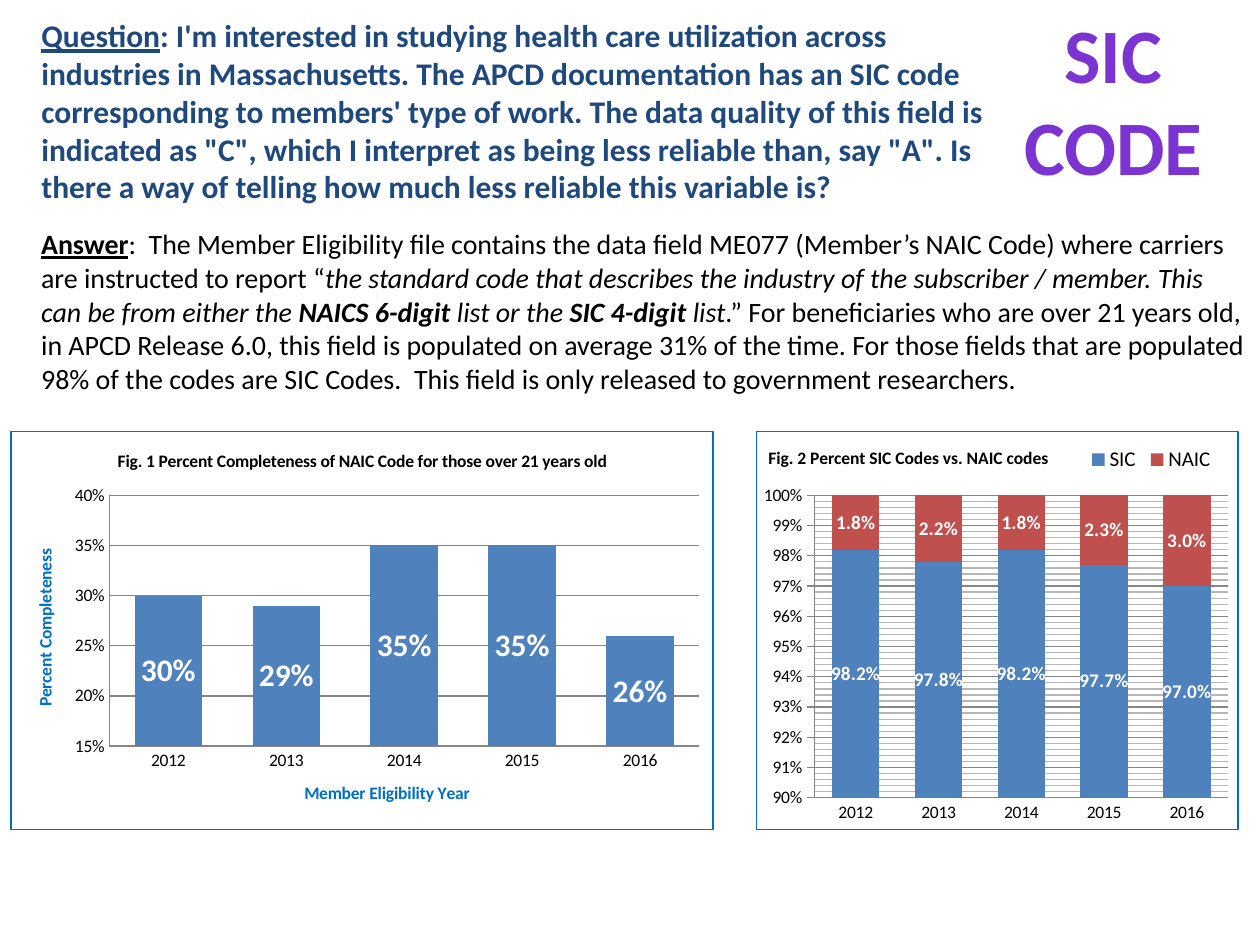
import pptx
import pptx.chart.data
import pptx.dml.color
import pptx.enum.chart
import pptx.enum.text
import pptx.oxml
import pptx.oxml.ns
import pptx.util
from pptx.util import Cm

FONT = "Calibri"
BLUE, RED, ACCENT, GREY = "4F81BD", "C0504D", "0070C0", "868686"
YEARS = ["2012", "2013", "2014", "2015", "2016"]
CHART_TOP, CHART_HEIGHT = 8.69, 8.05
DRAWING = pptx.oxml.ns.nsdecls("a")
CHARTING = pptx.oxml.ns.nsdecls("c", "a")
PURPLES = [(0, "3D1B67"), (43, "7B34D2"), (48, "7330C4"), (100, "3D1B67")]


def color(value):
    """Return a colour from a hex string."""
    return pptx.dml.color.RGBColor.from_string(value)


def style_font(font, size, fill="000000", bold=False):
    """Set the typeface, size, weight and colour of a font."""
    font.name = FONT
    font.size = pptx.util.Pt(size)
    font.bold = bold
    font.color.rgb = color(fill)


def add_run(paragraph, text, size, fill="000000", bold=False, italic=False, underline=False):
    """Append one formatted run to a paragraph."""
    run = paragraph.add_run()
    run.text = text
    style_font(run.font, size, fill, bold)
    run.font.italic = italic
    run.font.underline = underline
    return run


def add_text_box(slide, left, top, width, height, wrap=True):
    """Add a text box that grows with its text and return its paragraph."""
    shape = slide.shapes.add_textbox(Cm(left), Cm(top), Cm(width), Cm(height))
    shape.text_frame.word_wrap = wrap
    shape.text_frame.auto_size = pptx.enum.text.MSO_AUTO_SIZE.SHAPE_TO_FIT_TEXT
    return shape.text_frame.paragraphs[0]


def add_question(slide):
    """Put the question in the title placeholder."""
    title = slide.shapes.title
    title.left, title.top, title.width, title.height = Cm(0.58), Cm(0.64), Cm(20.12), Cm(3.18)
    frame = title.text_frame
    frame.word_wrap = True
    frame.auto_size = pptx.enum.text.MSO_AUTO_SIZE.NONE
    frame.vertical_anchor = pptx.enum.text.MSO_ANCHOR.MIDDLE
    paragraph = frame.paragraphs[0]
    paragraph.alignment = pptx.enum.text.PP_ALIGN.LEFT
    add_run(paragraph, "Question", 18, "1F497D", bold=True, underline=True)
    add_run(paragraph, ": I'm interested in studying health care utilization across industries in "
            "Massachusetts. The APCD documentation has an SIC code corresponding to members' type of "
            "work. The data quality of this field is indicated as \"C\", which I interpret as being less "
            "reliable than, say \"A\". Is there a way of telling how much less reliable this variable is?",
            18, "1F497D", bold=True)


def add_topic(slide):
    """Add the outlined topic words with a purple gradient."""
    paragraph = add_text_box(slide, 19.69, 0, 5.51, 4.01)
    paragraph.alignment = pptx.enum.text.PP_ALIGN.CENTER
    run = add_run(paragraph, "SIC CODE", 44, "7B34D2", bold=True)
    properties = next(slide.shapes[-1].element.iter(pptx.oxml.ns.qn("a:rPr")))
    properties.remove(properties.find(pptx.oxml.ns.qn("a:solidFill")))
    stops = "".join(f'<a:gs pos="{place * 1000}"><a:srgbClr val="{value}"/></a:gs>'
                    for place, value in PURPLES)
    gradient = f'<a:gradFill {DRAWING}><a:gsLst>{stops}</a:gsLst><a:lin ang="5400000"/></a:gradFill>'
    outline = (f'<a:ln {DRAWING} w="9000"><a:solidFill><a:srgbClr val="5E457C"/>'
               '</a:solidFill></a:ln>')
    for index, markup in enumerate((outline, gradient)):
        properties.insert(index, pptx.oxml.parse_xml(markup))


def add_answer(slide):
    """Add the answer paragraph with its quoted instruction."""
    paragraph = add_text_box(slide, 0.58, 4.45, 24.77, 3.68)
    add_run(paragraph, "Answer", 16, bold=True, underline=True)
    add_run(paragraph, ":  The Member Eligibility file contains the data field ME077 (Member’s NAIC "
            "Code) where carriers are instructed to report “", 16)
    quote = [("the standard code that describes the industry of the subscriber / member. This can be "
              "from either the ", False),
             ("NAICS 6-digit ", True), ("list or the ", False), ("SIC 4-digit ", True), ("list", False)]
    for text, bold in quote:
        add_run(paragraph, text, 16, bold=bold, italic=True)
    add_run(paragraph, ".” For beneficiaries who are over 21 years old, in APCD Release 6.0, this field "
            "is populated on average 31% of the time. For those fields that are populated 98% of the "
            "codes are SIC Codes.  This field is only released to government researchers.", 16)


def set_layout(parent, index, box, inner=False):
    """Give a chart part a manual place in fractions of the chart."""
    for old in parent.findall(pptx.oxml.ns.qn("c:layout")):
        parent.remove(old)
    target = '<c:layoutTarget val="inner"/>' if inner else ""
    modes = '<c:xMode val="edge"/><c:yMode val="edge"/>'
    sizes = "".join(f'<c:{name} val="{value}"/>' for name, value in zip("xywh", box))
    parent.insert(index, pptx.oxml.parse_xml(
        f"<c:layout {CHARTING}><c:manualLayout>{target}{modes}{sizes}</c:manualLayout></c:layout>"))


def line_properties(value):
    """Return chart shape properties with a thin line and no fill."""
    return pptx.oxml.parse_xml(
        f'<c:spPr {CHARTING}><a:noFill/><a:ln w="9525"><a:solidFill><a:srgbClr val="{value}"/>'
        "</a:solidFill></a:ln></c:spPr>")


def style_line(line):
    """Make a chart line thin and grey."""
    line.color.rgb = color(GREY)
    line.width = pptx.util.Pt(0.75)


def style_axes(chart, minimum, maximum, step, tick):
    """Set the scale, ticks, lines and fonts of both axes."""
    none = pptx.enum.chart.XL_TICK_MARK.NONE
    value_axis = chart.value_axis
    value_axis.minimum_scale, value_axis.maximum_scale = minimum, maximum
    value_axis.major_unit = step
    value_axis.has_major_gridlines = True
    style_line(value_axis.major_gridlines.format.line)
    value_axis.tick_labels.number_format = "0%"
    value_axis.tick_labels.number_format_is_linked = False
    for axis, mark in ((chart.category_axis, none), (value_axis, tick)):
        axis.major_tick_mark, axis.minor_tick_mark = mark, none
        style_line(axis.format.line)
        style_font(axis.tick_labels.font, 10)


def add_column_chart(slide, kind, left, width, series, overlap, label_size, label_format, plot_box):
    """Add a bordered column chart with centred labels."""
    data = pptx.chart.data.CategoryChartData(number_format=label_format)
    data.categories = YEARS
    for name, values, _ in series:
        data.add_series(name, values)
    chart = slide.shapes.add_chart(kind, Cm(left), Cm(CHART_TOP), Cm(width), Cm(CHART_HEIGHT), data).chart
    style_font(chart.font, 18)
    chart.has_title = chart.has_legend = False
    plot = chart.plots[0]
    plot.gap_width, plot.overlap, plot.vary_by_categories = 75, overlap, False
    for column, (_, _, fill) in zip(plot.series, series):
        column.format.fill.solid()
        column.format.fill.fore_color.rgb = color(fill)
        labels = column.data_labels
        labels.show_value = True
        labels.position = pptx.enum.chart.XL_LABEL_POSITION.CENTER
        labels.number_format, labels.number_format_is_linked = label_format, False
        style_font(labels.font, label_size, "FFFFFF", bold=True)
    body = chart.element.find(pptx.oxml.ns.qn("c:chart"))
    set_layout(body.find(pptx.oxml.ns.qn("c:plotArea")), 0, plot_box, inner=True)
    body.addnext(line_properties(ACCENT))
    return chart


def add_completeness_chart(slide):
    """Add figure 1 with its title and axis titles."""
    series = [("Series 1", [0.3, 0.29, 0.35, 0.35, 0.26], BLUE)]
    chart = add_column_chart(slide, pptx.enum.chart.XL_CHART_TYPE.COLUMN_CLUSTERED, 0.21, 14.18,
                             series, 40, 18, "0%", (0.14, 0.16, 0.84, 0.63))
    style_axes(chart, 0.15, 0.4, 0.05, pptx.enum.chart.XL_TICK_MARK.NONE)
    titles = [(chart, "Fig. 1 Percent Completeness of NAIC Code for those over 21 years old", "000000"),
              (chart.category_axis, "Member Eligibility Year", ACCENT),
              (chart.value_axis, "Percent Completeness", ACCENT)]
    for owner, text, fill in titles:
        owner.has_title = True
        title = owner.chart_title if owner is chart else owner.axis_title
        add_run(title.text_frame.paragraphs[0], text, 10, fill, bold=True)


def add_code_share_chart(slide):
    """Add figure 2 with its legend and heading."""
    series = [("SIC", [0.982, 0.978, 0.982, 0.977, 0.97], BLUE),
              ("NAIC", [0.018, 0.022, 0.018, 0.023, 0.03], RED)]
    chart = add_column_chart(slide, pptx.enum.chart.XL_CHART_TYPE.COLUMN_STACKED, 15.24, 9.73,
                             series, 100, 11, "0.0%", (0.12, 0.16, 0.86, 0.76))
    style_axes(chart, 0.9, 1, 0.01, pptx.enum.chart.XL_TICK_MARK.OUTSIDE)
    chart.value_axis.has_minor_gridlines = True
    next(chart.element.iter(pptx.oxml.ns.qn("c:minorGridlines"))).append(line_properties("B7B7B7"))
    chart.has_legend = True
    chart.legend.position = pptx.enum.chart.XL_LEGEND_POSITION.TOP
    chart.legend.include_in_layout = False
    style_font(chart.legend.font, 12)
    set_layout(next(chart.element.iter(pptx.oxml.ns.qn("c:legend"))), 1, (0.68, 0.03, 0.28, 0.08))
    heading = add_text_box(slide, 15.24, 8.89, 6.22, 0.69, wrap=False)
    add_run(heading, "Fig. 2 Percent SIC Codes vs. NAIC codes", 10, bold=True)


def main():
    """Build and save the slide."""
    presentation = pptx.Presentation()
    presentation.slide_width, presentation.slide_height = Cm(25.4), Cm(19.05)
    slide = presentation.slides.add_slide(presentation.slide_layouts[5])
    add_question(slide)
    add_topic(slide)
    add_answer(slide)
    add_completeness_chart(slide)
    add_code_share_chart(slide)
    presentation.save("out.pptx")


if __name__ == "__main__":
    main()
